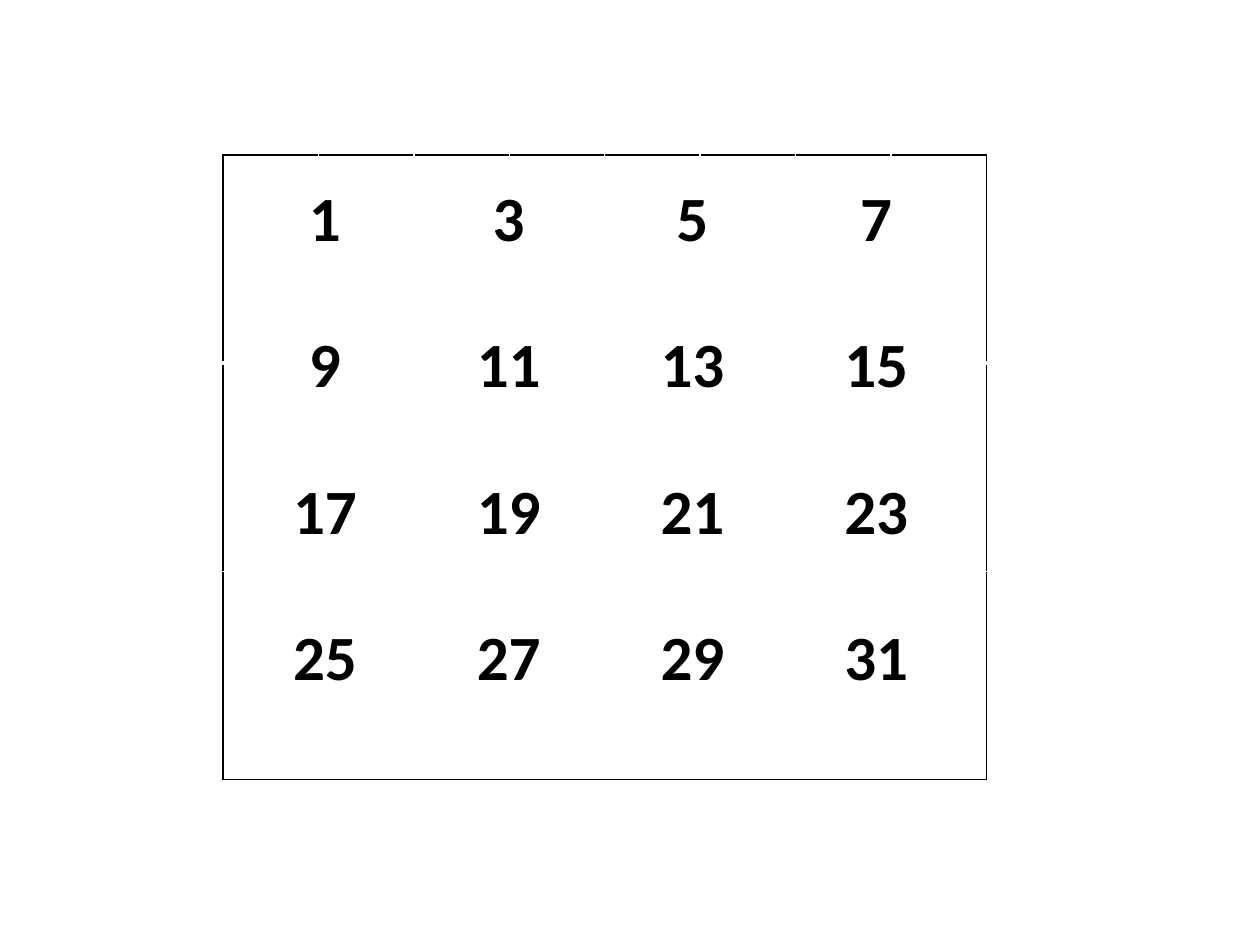
from lxml import etree
from pptx import Presentation
from pptx.dml.color import RGBColor
from pptx.enum.text import PP_ALIGN
from pptx.oxml.ns import qn
from pptx.util import Pt

CENTER = PP_ALIGN.CENTER
BLANK_LAYOUT = 6

# Content: odd numbers in a 4 by 4 grid, inside an empty framed table
NUMBERS = [
    ["1", "3", "5", "7"],
    ["9", "11", "13", "15"],
    ["17", "19", "21", "23"],
    ["25", "27", "29", "31"],
]
FRAME_CELLS = [[""] * 8 for _ in range(3)]

COLORS = {"ink": "000000", "paper": "FFFFFF"}
FONT = {"name": "Calibri", "size": Pt(36), "bold": True}

# Left, top, width, height in points
FRAME_BOX = (127.4, 88.5, 436.4, 357)
NUMBERS_BOX = (133.2, 100.1, 420, 334.8)


def set_border(cell, side, position, color, width):
    """Draw one side of a cell; sides come before the fill, in L, R, T, B order."""
    properties = cell._tc.get_or_add_tcPr()
    line = etree.Element(qn(f"a:ln{side}"), w=str(Pt(width)))
    fill = etree.SubElement(line, qn("a:solidFill"))
    etree.SubElement(fill, qn("a:srgbClr"), val=COLORS[color])
    properties.insert(position, line)


def add_grid(slide, rows, box, outline):
    """Add a table with equal cells, an outline colour and white inner lines."""
    row_count, column_count = len(rows), len(rows[0])
    left, top, width, height = box
    table = slide.shapes.add_table(
        row_count, column_count, Pt(left), Pt(top), Pt(width), Pt(height)
    ).table
    for column in table.columns:
        column.width = Pt(width / column_count)
    for row in table.rows:
        row.height = Pt(height / row_count)

    for r, texts in enumerate(rows):
        for c, text in enumerate(texts):
            cell = table.cell(r, c)
            cell.fill.background()
            on_edge = {
                "L": c == 0,
                "R": c == column_count - 1,
                "T": r == 0,
                "B": r == row_count - 1,
            }
            for position, (side, is_edge) in enumerate(on_edge.items()):
                # The line under the header row is heavier
                under_header = (r == 0 and side == "B") or (r == 1 and side == "T")
                set_border(cell, side, position,
                           outline if is_edge else "paper",
                           3 if under_header else 1)
            if text:
                paragraph = cell.text_frame.paragraphs[0]
                paragraph.alignment = CENTER
                run = paragraph.add_run()
                run.text = text
                for name, value in FONT.items():
                    setattr(run.font, name, value)
                run.font.color.rgb = RGBColor.from_string(COLORS["ink"])


def main():
    presentation = Presentation()
    presentation.slide_width, presentation.slide_height = Pt(720), Pt(540)
    slide = presentation.slides.add_slide(presentation.slide_layouts[BLANK_LAYOUT])

    # Framed table behind, numbers in front
    add_grid(slide, FRAME_CELLS, FRAME_BOX, "ink")
    add_grid(slide, NUMBERS, NUMBERS_BOX, "paper")

    presentation.save("out.pptx")


if __name__ == "__main__":
    main()
